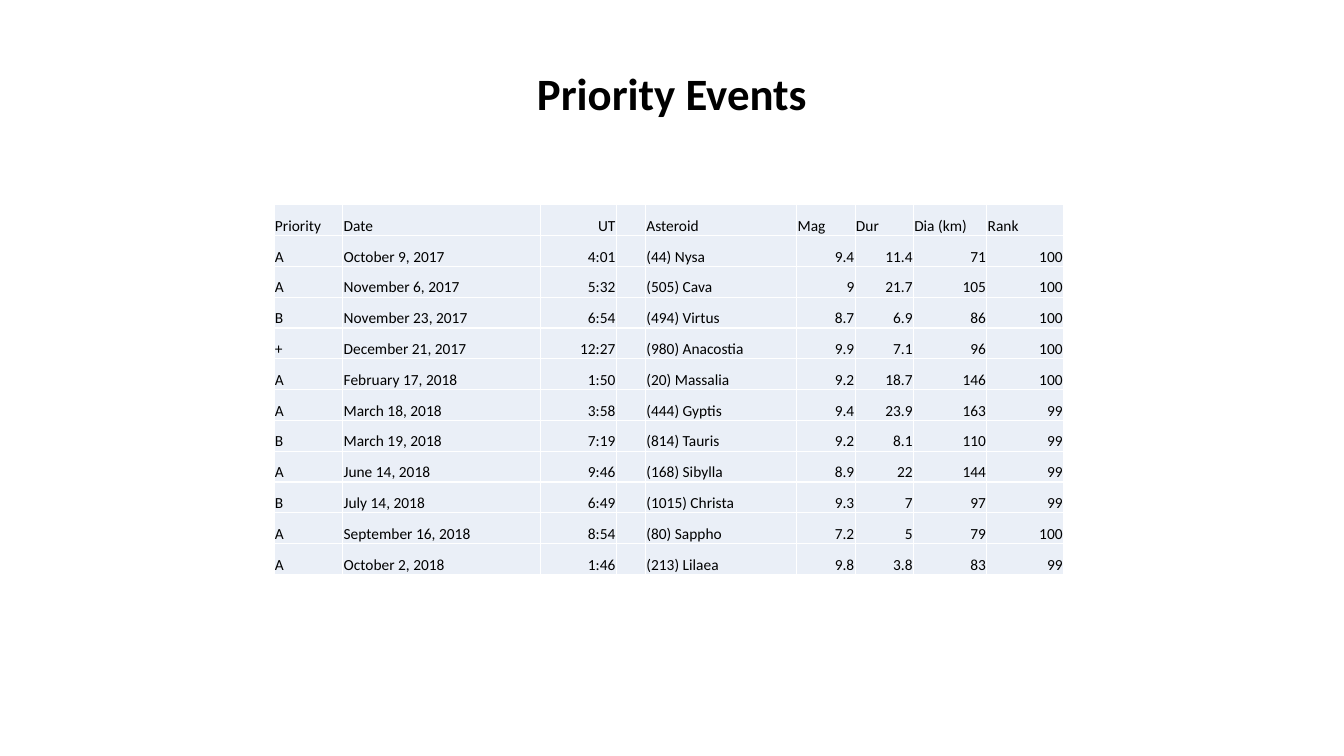
"""Build the Priority Events slide with its table of asteroid events."""
from dataclasses import dataclass, astuple

from lxml.etree import SubElement
from pptx import Presentation
from pptx.dml.color import RGBColor
from pptx.enum.text import MSO_ANCHOR, MSO_AUTO_SIZE, PP_ALIGN
from pptx.oxml.ns import qn
from pptx.slide import Slide
from pptx.table import _Cell
from pptx.util import Cm, Pt

BLACK = RGBColor(0x00, 0x00, 0x00)
WHITE = RGBColor(0xFF, 0xFF, 0xFF)
PALE_BLUE = RGBColor(0xEA, 0xEF, 0xF7)
FONT_NAME = "Calibri"
CELL_SIZE = Pt(11)
TABLE_LEFT, TABLE_TOP, TABLE_HEIGHT = Cm(6.91), Cm(5.16), Cm(9.32)


@dataclass(frozen=True)
class Column:
    heading: str
    width: float
    heading_align: PP_ALIGN = PP_ALIGN.LEFT
    value_align: PP_ALIGN = PP_ALIGN.LEFT


@dataclass(frozen=True)
class Event:
    priority: str
    date: str
    time: str
    gap: str
    asteroid: str
    magnitude: str
    duration: str
    diameter: str
    rank: str


COLUMNS = [
    Column("Priority", 1.73),
    Column("Date", 4.98),
    Column("UT", 1.91, PP_ALIGN.RIGHT, PP_ALIGN.RIGHT),
    Column("", 0.74),
    Column("Asteroid", 3.81),
    Column("Mag", 1.47, value_align=PP_ALIGN.RIGHT),
    Column("Dur", 1.47, value_align=PP_ALIGN.RIGHT),
    Column("Dia (km)", 1.85, value_align=PP_ALIGN.RIGHT),
    Column("Rank", 1.93, value_align=PP_ALIGN.RIGHT),
]

EVENTS = [
    Event("A", "October 9, 2017", "4:01", "", "(44) Nysa", "9.4", "11.4", "71", "100"),
    Event("A", "November 6, 2017", "5:32", "", "(505) Cava", "9", "21.7", "105", "100"),
    Event("B", "November 23, 2017", "6:54", "", "(494) Virtus", "8.7", "6.9", "86", "100"),
    Event("+", "December 21, 2017", "12:27", "", "(980) Anacostia", "9.9", "7.1", "96", "100"),
    Event("A", "February 17, 2018", "1:50", "", "(20) Massalia", "9.2", "18.7", "146", "100"),
    Event("A", "March 18, 2018", "3:58", "", "(444) Gyptis", "9.4", "23.9", "163", "99"),
    Event("B", "March 19, 2018", "7:19", "", "(814) Tauris", "9.2", "8.1", "110", "99"),
    Event("A", "June 14, 2018", "9:46", "", "(168) Sibylla", "8.9", "22", "144", "99"),
    Event("B", "July 14, 2018", "6:49", "", "(1015) Christa", "9.3", "7", "97", "99"),
    Event("A", "September 16, 2018", "8:54", "", "(80) Sappho", "7.2", "5", "79", "100"),
    Event("A", "October 2, 2018", "1:46", "", "(213) Lilaea", "9.8", "3.8", "83", "99"),
]


def add_span(para, text: str, size: Pt, bold: bool) -> None:
    span = para.add_run()
    span.text = text
    span.font.name = FONT_NAME
    span.font.size = size
    span.font.bold = bold
    span.font.color.rgb = BLACK


def draw_title(page: Slide) -> None:
    box = page.shapes.title
    box.left, box.top, box.width, box.height = Cm(2.33), Cm(1.01), Cm(29.21), Cm(3.68)
    frame = box.text_frame
    frame.auto_size = MSO_AUTO_SIZE.NONE
    frame.vertical_anchor = MSO_ANCHOR.MIDDLE
    frame.margin_bottom = Cm(1)
    para = frame.paragraphs[0]
    para.alignment = PP_ALIGN.CENTER
    para.line_spacing = 0.9
    add_span(para, "Priority Events", Pt(32), True)


def add_borders(cell: _Cell) -> None:
    properties = cell._tc.get_or_add_tcPr()
    for index, side in enumerate(("a:lnL", "a:lnR", "a:lnT", "a:lnB")):
        line = properties.makeelement(qn(side), {"w": str(Pt(1))})
        fill = SubElement(line, qn("a:solidFill"))
        SubElement(fill, qn("a:srgbClr"), val=str(WHITE))
        properties.insert(index, line)


def fill_cell(cell: _Cell, text: str, align: PP_ALIGN) -> None:
    cell.fill.solid()
    cell.fill.fore_color.rgb = PALE_BLUE
    cell.vertical_anchor = MSO_ANCHOR.BOTTOM
    cell.margin_left = cell.margin_right = cell.margin_top = Cm(0.02)
    cell.margin_bottom = 0
    add_borders(cell)
    para = cell.text_frame.paragraphs[0]
    para.alignment = align
    if text:
        add_span(para, text, CELL_SIZE, False)
    else:
        SubElement(para._p, qn("a:endParaRPr"), sz=str(int(CELL_SIZE.pt * 100)))


def draw_events(page: Slide) -> None:
    row_count = len(EVENTS) + 1
    total_width = Cm(sum(column.width for column in COLUMNS))
    table = page.shapes.add_table(
        row_count, len(COLUMNS), TABLE_LEFT, TABLE_TOP, total_width, TABLE_HEIGHT
    ).table
    table.first_row = table.horz_banding = False
    for row in table.rows:
        row.height = TABLE_HEIGHT // row_count
    for position, column in enumerate(COLUMNS):
        table.columns[position].width = Cm(column.width)
        fill_cell(table.cell(0, position), column.heading, column.heading_align)
    for number, event in enumerate(EVENTS, start=1):
        for position, (column, value) in enumerate(zip(COLUMNS, astuple(event))):
            fill_cell(table.cell(number, position), value, column.value_align)


def main() -> None:
    deck = Presentation()
    deck.slide_width, deck.slide_height = Cm(33.87), Cm(19.05)
    page = deck.slides.add_slide(deck.slide_layouts[5])
    draw_title(page)
    draw_events(page)
    deck.save("out.pptx")


if __name__ == "__main__":
    main()
